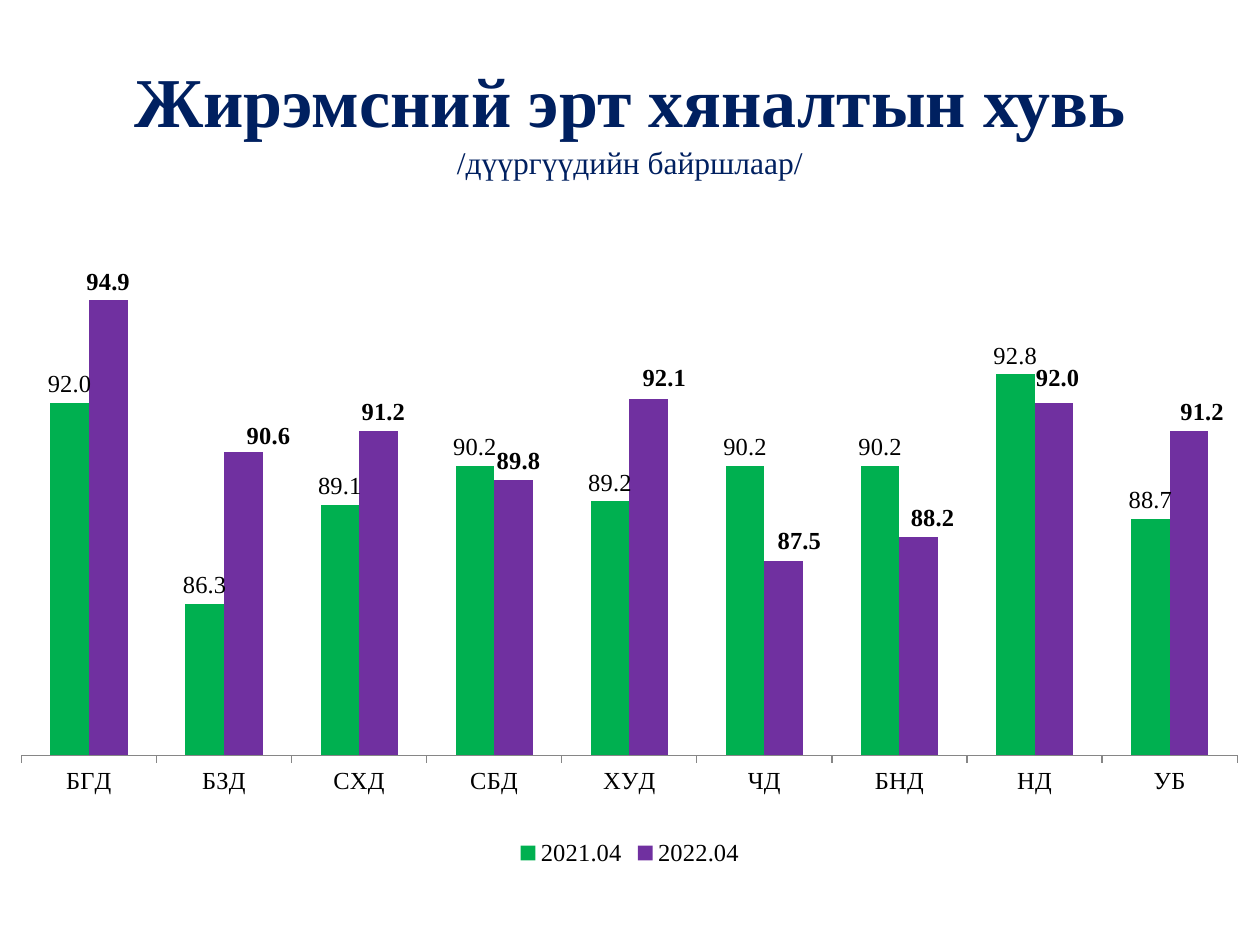
from typing import NamedTuple

from lxml.etree import SubElement
from pptx import Presentation
from pptx.chart.data import CategoryChartData
from pptx.dml.color import RGBColor
from pptx.enum.chart import XL_CHART_TYPE as ChartType
from pptx.enum.chart import XL_LABEL_POSITION as LabelPosition
from pptx.enum.chart import XL_LEGEND_POSITION as LegendPosition
from pptx.enum.chart import XL_TICK_MARK as TickMark
from pptx.enum.text import MSO_ANCHOR, PP_ALIGN
from pptx.oxml.ns import qn
from pptx.util import Inches, Pt

NAVY = RGBColor(0x00, 0x20, 0x60)
GREEN = RGBColor(0x00, 0xB0, 0x50)
PURPLE = RGBColor(0x70, 0x30, 0xA0)
BLACK = RGBColor(0x00, 0x00, 0x00)
GRAY = RGBColor(0x86, 0x86, 0x86)
FONT = "Times New Roman"
NUMBER_FORMAT = "0.0"


class TitleRun(NamedTuple):
    text: str
    size: int
    bold: bool


class YearSeries(NamedTuple):
    name: str
    values: tuple
    color: RGBColor
    bold: bool
    label_shifts: dict  # point index -> (x, y) as shares of the chart


DISTRICTS = ("БГД", "БЗД", "СХД", "СБД", "ХУД", "ЧД", "БНД", "НД", "УБ")
TITLE = (
    TitleRun("Жирэмсний эрт хяналтын хувь", 40, True),
    TitleRun(" ", 44, False),
    TitleRun("/дүүргүүдийн байршлаар/", 18, False),
)
YEARS = (
    YearSeries("2021.04", (92, 86.3, 89.1, 90.2, 89.2, 90.2, 90.2, 92.8, 88.7),
               GREEN, False, {}),
    YearSeries("2022.04", (94.9, 90.6, 91.2, 89.8, 92.1, 87.5, 88.2, 92, 91.2),
               PURPLE, True,
               {1: (0.02, 0.005), 2: (0.004, 0), 3: (0.004, 0),
                4: (0.0125, -0.003), 5: (0.0125, -0.003), 6: (0.011, 0),
                7: (0.003, -0.01), 8: (0.0105, 0)}),
)
PLOT_AREA = {"layoutTarget": "inner", "xMode": "edge", "yMode": "edge",
             "x": 0.017, "y": 0.031, "w": 0.965, "h": 0.784}


def set_attributes(target, **values) -> None:
    for name, value in values.items():
        setattr(target, name, value)


def set_font(font, size: int, color: RGBColor, bold: bool = False) -> None:
    set_attributes(font, name=FONT, size=Pt(size), bold=bold)
    font.color.rgb = color


def add_manual_layout(layout, values: dict) -> None:
    manual = SubElement(layout, qn("c:manualLayout"))
    for name, value in values.items():
        SubElement(manual, qn(f"c:{name}")).set("val", str(value))


def add_title(slide) -> None:
    box = slide.shapes.add_textbox(Inches(0.5), Inches(0.17), Inches(9), Inches(1.5))
    frame = box.text_frame
    set_attributes(frame, word_wrap=True, vertical_anchor=MSO_ANCHOR.MIDDLE)
    paragraph = frame.paragraphs[0]
    paragraph.alignment = PP_ALIGN.CENTER
    for part in TITLE:
        run = paragraph.add_run()
        run.text = part.text
        set_font(run.font, part.size, NAVY, part.bold)


def shift_label(series, index: int, x: float, y: float) -> None:
    label = series.points[index].data_label
    set_font(label.font, 14, BLACK, True)
    label.position = LabelPosition.OUTSIDE_END
    element = series._element.xpath(f"c:dLbls/c:dLbl[c:idx/@val='{index}']")[0]
    layout = SubElement(element, qn("c:layout"))
    add_manual_layout(layout, {"x": x, "y": y})
    number_format = SubElement(element, qn("c:numFmt"))
    number_format.set("formatCode", NUMBER_FORMAT)
    number_format.set("sourceLinked", "0")
    element.insert(1, layout)
    element.insert(2, number_format)


def format_series(series, year: YearSeries) -> None:
    series.invert_if_negative = False
    series.format.fill.solid()
    series.format.fill.fore_color.rgb = year.color
    labels = series.data_labels
    set_attributes(labels, show_value=True, number_format=NUMBER_FORMAT,
                   number_format_is_linked=False, position=LabelPosition.OUTSIDE_END)
    set_font(labels.font, 14, BLACK, year.bold)
    for index, (x, y) in year.label_shifts.items():
        shift_label(series, index, x, y)


def add_district_chart(slide) -> None:
    data = CategoryChartData(number_format=NUMBER_FORMAT)
    data.categories = DISTRICTS
    for year in YEARS:
        data.add_series(year.name, year.values)
    chart = slide.shapes.add_chart(ChartType.COLUMN_CLUSTERED, 0, Inches(1.92),
                                   Inches(10), Inches(5), data).chart
    set_attributes(chart, has_title=False, has_legend=True)
    set_font(chart.font, 14, BLACK)
    set_attributes(chart.legend, position=LegendPosition.BOTTOM, include_in_layout=False)
    set_attributes(chart.value_axis, minimum_scale=82, maximum_scale=96,
                   has_major_gridlines=False, visible=False)
    chart.category_axis.major_tick_mark = TickMark.OUTSIDE
    line = chart.category_axis.format.line
    line.color.rgb = GRAY
    line.width = Pt(0.75)

    plot = chart.plots[0]
    set_attributes(plot, gap_width=150, overlap=0, vary_by_categories=False)
    for series, year in zip(plot.series, YEARS):
        format_series(series, year)

    plot_area = chart._chartSpace.chart.plotArea
    layout = plot_area.find(qn("c:layout"))
    if layout is None:
        layout = SubElement(plot_area, qn("c:layout"))
        plot_area.insert(0, layout)
    add_manual_layout(layout, PLOT_AREA)


def main() -> None:
    presentation = Presentation()
    set_attributes(presentation, slide_width=Inches(10), slide_height=Inches(7.5))
    slide = presentation.slides.add_slide(presentation.slide_layouts[6])
    add_title(slide)
    add_district_chart(slide)
    presentation.save("out.pptx")


if __name__ == "__main__":
    main()
